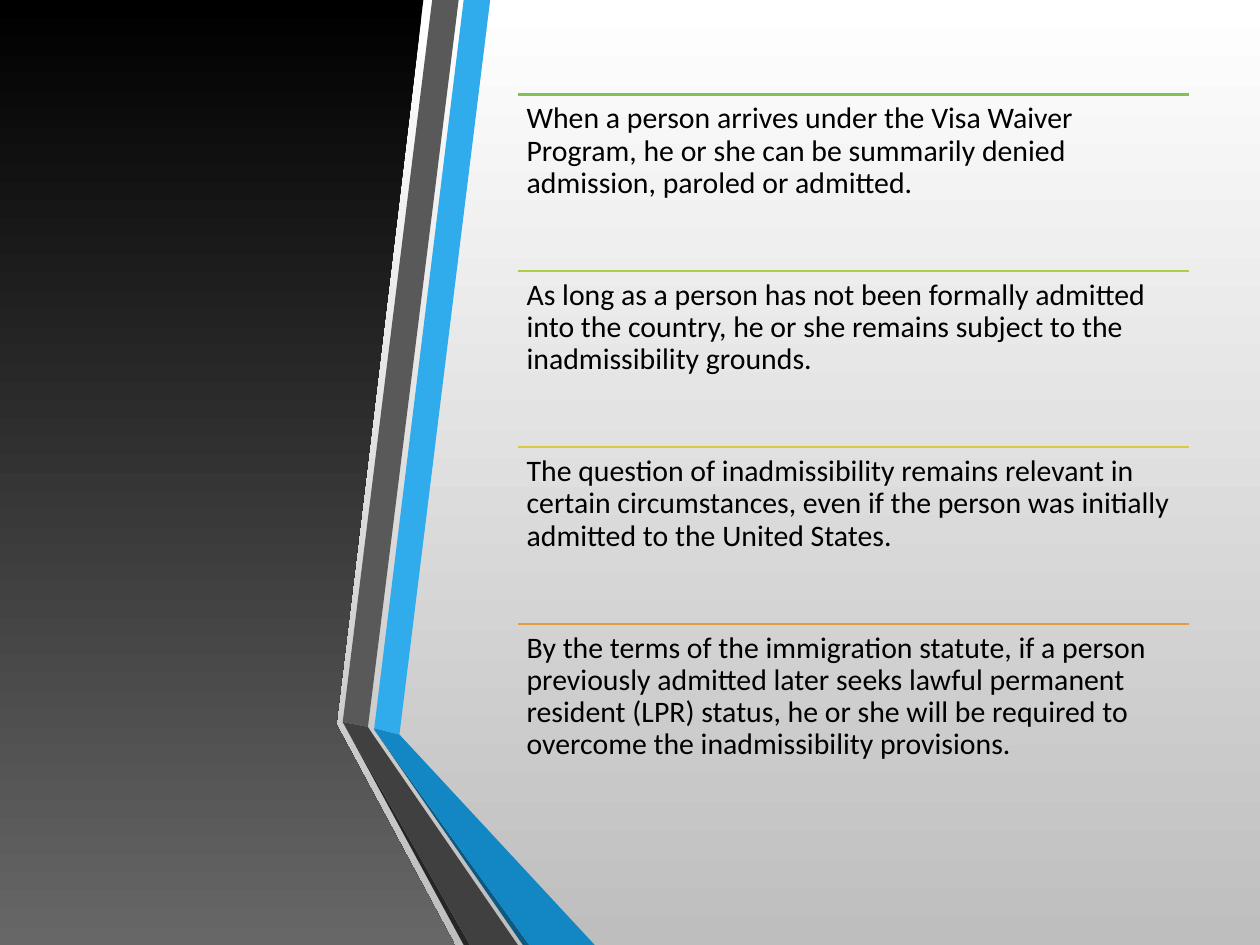
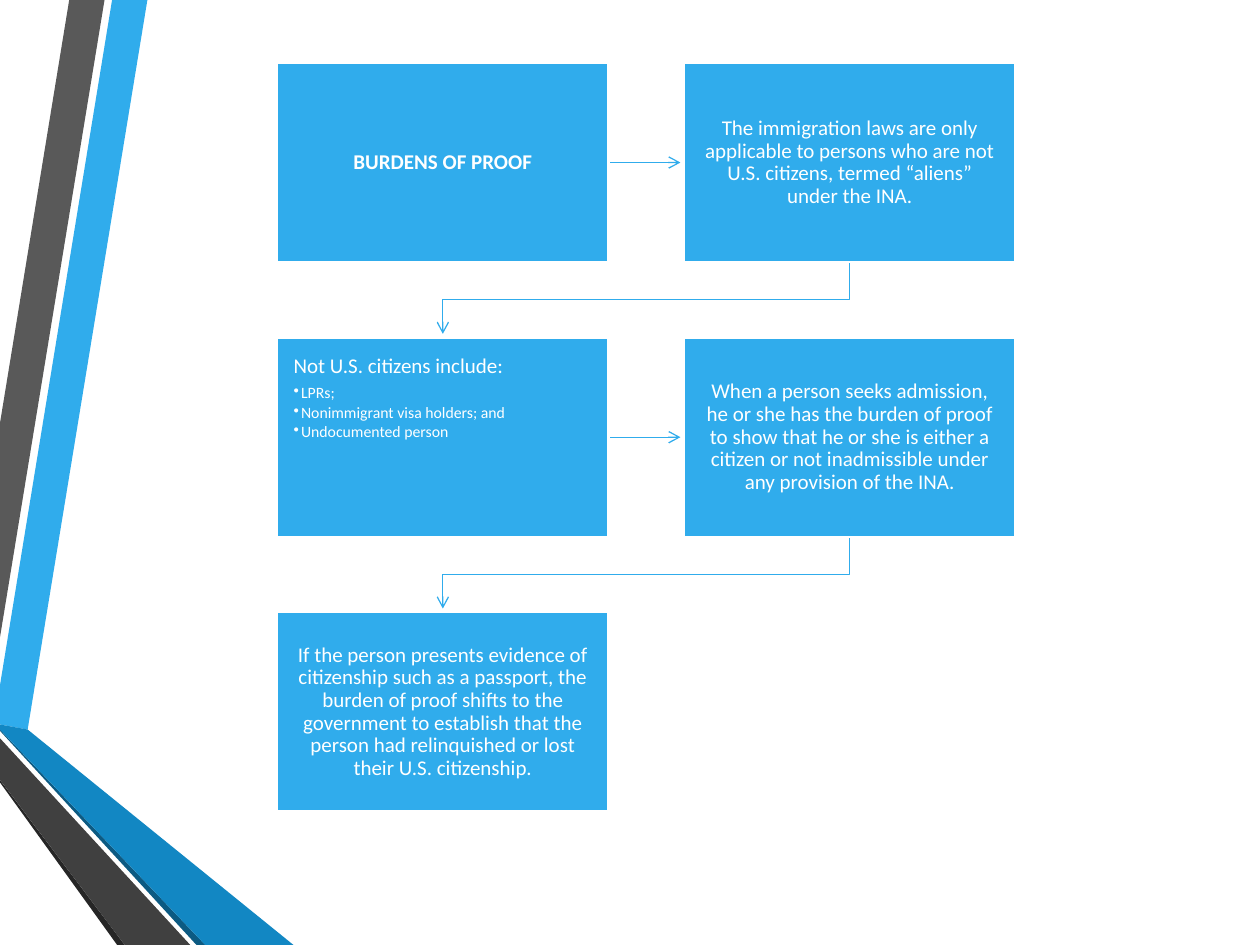
from dataclasses import dataclass
from itertools import pairwise

from lxml.etree import SubElement
from pptx import Presentation
from pptx.dml.color import RGBColor
from pptx.dml.fill import FillFormat
from pptx.enum.shapes import MSO_CONNECTOR, MSO_SHAPE
from pptx.enum.text import MSO_ANCHOR, PP_ALIGN
from pptx.oxml.ns import qn
from pptx.shapes.autoshape import Shape
from pptx.shapes.connector import Connector
from pptx.slide import Slide
from pptx.text.text import TextFrame
from pptx.util import Inches, Pt

Point = tuple[float, float]

FONT = "Calibri"
COLOURS = {
    "blue": "30ACEC",
    "deep_blue": "1287C3",
    "navy": "0C5A82",
    "grey": "595959",
    "dark_grey": "404040",
    "charcoal": "262626",
    "black": "000000",
    "panel_end": "676767",
    "white": "FFFFFF",
    "silver": "BEBEBE",
    "green": "80C34F",
    "lime": "ADCE49",
    "yellow": "D8CB43",
    "orange": "E29D3E",
}


@dataclass
class Band:
    colour: str
    points: list[Point]


@dataclass
class Statement:
    colour: str
    text: str


@dataclass
class Step:
    text: str
    bold: bool = False
    bullets: tuple[str, ...] = ()


PANEL = [(0, 0), (3.36, 0), (2.67, 5.75), (3.61, 7.5), (0, 7.5)]

STATEMENT_BANDS = [
    Band("blue", [(2.97, 5.78), (3.17, 5.83), (3.89, 0), (3.68, 0)]),
    Band("grey", [(3.64, 0), (3.43, 0), (2.72, 5.73), (2.92, 5.77)]),
    Band("charcoal", [(2.72, 5.73), (3.68, 7.5), (3.73, 7.5)]),
    Band("navy", [(2.97, 5.79), (4.15, 7.5), (4.2, 7.5)]),
    Band("deep_blue", [(2.97, 5.78), (2.97, 5.79), (4.2, 7.5), (4.72, 7.5), (3.17, 5.83)]),
    Band("dark_grey", [(4.11, 7.5), (2.96, 5.83), (2.92, 5.77), (2.72, 5.73), (3.73, 7.5)]),
]

FLOW_BANDS = [
    Band("blue", [(0, 5.44), (0, 5.75), (0.22, 5.79), (1.17, 0), (0.89, 0)]),
    Band("grey", [(0.83, 0), (0.55, 0), (0, 3.36), (0, 5.06)]),
    Band("charcoal", [(0, 6.19), (0, 6.21), (0.93, 7.5), (0.99, 7.5)]),
    Band("navy", [(0, 5.79), (0, 5.8), (1.56, 7.5), (1.63, 7.5)]),
    Band("deep_blue", [(0, 5.75), (0, 5.79), (1.63, 7.5), (2.33, 7.5), (0.22, 5.79)]),
    Band("dark_grey", [(0, 6.19), (0.99, 7.5), (1.51, 7.5), (0, 5.86)]),
]

STATEMENTS = [
    Statement("green", "When a person arrives under the Visa Waiver Program, he or she can be "
              "summarily denied admission, paroled or admitted."),
    Statement("lime", "As long as a person has not been formally admitted into the country, "
              "he or she remains subject to the inadmissibility grounds."),
    Statement("yellow", "The question of inadmissibility remains relevant in certain "
              "circumstances, even if the person was initially admitted to the United States."),
    Statement("orange", "By the terms of the immigration statute, if a person previously "
              "admitted later seeks lawful permanent resident (LPR) status, he or she will be "
              "required to overcome the inadmissibility provisions."),
]
STATEMENT_LEFT, STATEMENT_TOP = 4.11, 0.75
STATEMENT_WIDTH, STATEMENT_HEIGHT = 5.33, 1.4

STEPS = [
    Step("BURDENS OF PROOF", bold=True),
    Step("The immigration laws are only applicable to persons who are not U.S. citizens, "
         "termed “aliens” under the INA."),
    Step("Not U.S. citizens include:",
         bullets=("LPRs;", "Nonimmigrant visa holders; and", "Undocumented person")),
    Step("When a person seeks admission, he or she has the burden of proof to show that he or "
         "she is either a citizen or not inadmissible under any provision of the INA."),
    Step("If the person presents evidence of citizenship such as a passport, the burden of "
         "proof shifts to the government to establish that the person had relinquished or "
         "lost their U.S. citizenship."),
]
STEP_LEFT, STEP_TOP = 2.2, 0.5
STEP_WIDTH, STEP_HEIGHT = 2.63, 1.58
COLUMN_PITCH, ROW_PITCH = 3.23, 2.18
ARROW_LENGTH, ELBOW_DROP = 0.57, 0.3


def colour_of(name: str) -> RGBColor:
    return RGBColor.from_string(COLOURS[name])


def fill_solid(fill: FillFormat, colour: str) -> None:
    fill.solid()
    fill.fore_color.rgb = colour_of(colour)


def fill_downward(fill: FillFormat, top: str, bottom: str) -> None:
    fill.gradient()
    fill.gradient_angle = 270
    for stop, colour, position in zip(fill.gradient_stops, (top, bottom), (0, 1)):
        stop.color.rgb = colour_of(colour)
        stop.position = position


def add_outline(page: Slide, points: list[Point], closed: bool = True) -> Shape:
    corners = [(Inches(x), Inches(y)) for x, y in points]
    builder = page.shapes.build_freeform(*corners[0], scale=1.0)
    builder.add_line_segments(corners[1:], close=closed)
    shape = builder.convert_to_shape()
    shape.shadow.inherit = False
    return shape


def add_bands(page: Slide, bands: list[Band]) -> None:
    for band in bands:
        shape = add_outline(page, band.points)
        fill_solid(shape.fill, band.colour)
        shape.line.fill.background()


def style_line(line_shape: Shape | Connector, colour: str, width: float) -> None:
    line_shape.line.color.rgb = colour_of(colour)
    line_shape.line.width = Pt(width)


def add_line(page: Slide, start: Point, end: Point, colour: str, width: float) -> Connector:
    line = page.shapes.add_connector(
        MSO_CONNECTOR.STRAIGHT, *(Inches(value) for value in (*start, *end)))
    style_line(line, colour, width)
    SubElement(line._element.spPr, qn("a:effectLst"))
    return line


def add_arrowhead(line_shape: Shape | Connector) -> None:
    SubElement(line_shape.line._get_or_add_ln(), qn("a:tailEnd"), type="arrow")


def set_frame(frame: TextFrame, side: float, edge: float, anchor: MSO_ANCHOR) -> None:
    frame.word_wrap = True
    frame.vertical_anchor = anchor
    frame.margin_left = frame.margin_right = Inches(side)
    frame.margin_top = frame.margin_bottom = Inches(edge)


def write_para(frame: TextFrame, text: str, size: float, colour: str,
               align: PP_ALIGN = PP_ALIGN.LEFT, bold: bool = False,
               bullet: bool = False) -> None:
    para = frame.add_paragraph() if frame.paragraphs[0].runs else frame.paragraphs[0]
    para.alignment = align
    para.line_spacing = 0.9
    para.space_after = Pt(size * (0.15 if bullet else 0.35))
    if bullet:
        properties = para._p.get_or_add_pPr()
        properties.set("marL", str(Inches(0.06)))
        properties.set("indent", str(-Inches(0.06)))
        SubElement(properties, qn("a:buChar"), char="•")
    span = para.add_run()
    span.text = text
    span.font.name = FONT
    span.font.size = Pt(size)
    span.font.bold = bold
    span.font.color.rgb = colour_of(colour)


def add_statement(page: Slide, index: int, statement: Statement) -> None:
    top = STATEMENT_TOP + index * STATEMENT_HEIGHT
    add_line(page, (STATEMENT_LEFT, top), (STATEMENT_LEFT + STATEMENT_WIDTH, top),
             statement.colour, 1.25)
    box = page.shapes.add_textbox(Inches(STATEMENT_LEFT), Inches(top),
                                  Inches(STATEMENT_WIDTH), Inches(STATEMENT_HEIGHT))
    set_frame(box.text_frame, 0.07, 0.07, MSO_ANCHOR.TOP)
    write_para(box.text_frame, statement.text, 17, "black")


def step_position(index: int) -> Point:
    row, column = divmod(index, 2)
    return STEP_LEFT + column * COLUMN_PITCH, STEP_TOP + row * ROW_PITCH


def add_step(page: Slide, index: int, step: Step) -> None:
    left, top = step_position(index)
    box = page.shapes.add_shape(MSO_SHAPE.RECTANGLE, Inches(left), Inches(top),
                                Inches(STEP_WIDTH), Inches(STEP_HEIGHT))
    box.shadow.inherit = False
    fill_solid(box.fill, "blue")
    style_line(box, "white", 1.25)
    anchor = MSO_ANCHOR.TOP if step.bullets else MSO_ANCHOR.MIDDLE
    align = PP_ALIGN.LEFT if step.bullets else PP_ALIGN.CENTER
    set_frame(box.text_frame, 0.13, 0.14, anchor)
    write_para(box.text_frame, step.text, 12, "white", align, step.bold)
    for item in step.bullets:
        write_para(box.text_frame, item, 9, "white", bullet=True)


def add_step_arrow(page: Slide, source: Point, target: Point) -> None:
    left, top = source
    if top == target[1]:
        start, middle = left + STEP_WIDTH, top + STEP_HEIGHT / 2
        arrow = add_line(page, (start, middle), (start + ARROW_LENGTH, middle), "blue", 0.75)
    else:
        start_x, end_x = left + STEP_WIDTH / 2, target[0] + STEP_WIDTH / 2
        bottom = top + STEP_HEIGHT
        turn = bottom + ELBOW_DROP
        arrow = add_outline(page, [(start_x, bottom), (start_x, turn), (end_x, turn),
                                   (end_x, bottom + ARROW_LENGTH)], closed=False)
        arrow.fill.background()
        style_line(arrow, "blue", 0.75)
    add_arrowhead(arrow)


def build_statements(page: Slide) -> None:
    fill_downward(page.background.fill, "white", "silver")
    panel = add_outline(page, PANEL)
    fill_downward(panel.fill, "black", "panel_end")
    panel.line.fill.background()
    add_bands(page, STATEMENT_BANDS)
    for index, statement in enumerate(STATEMENTS):
        add_statement(page, index, statement)


def build_flow(page: Slide) -> None:
    fill_solid(page.background.fill, "white")
    add_bands(page, FLOW_BANDS)
    for source, target in pairwise(map(step_position, range(len(STEPS)))):
        add_step_arrow(page, source, target)
    for index, step in enumerate(STEPS):
        add_step(page, index, step)


def main() -> None:
    deck = Presentation()
    deck.slide_width, deck.slide_height = Inches(10), Inches(7.5)
    for build in (build_statements, build_flow):
        build(deck.slides.add_slide(deck.slide_layouts[6]))
    deck.save("out.pptx")


if __name__ == "__main__":
    main()
